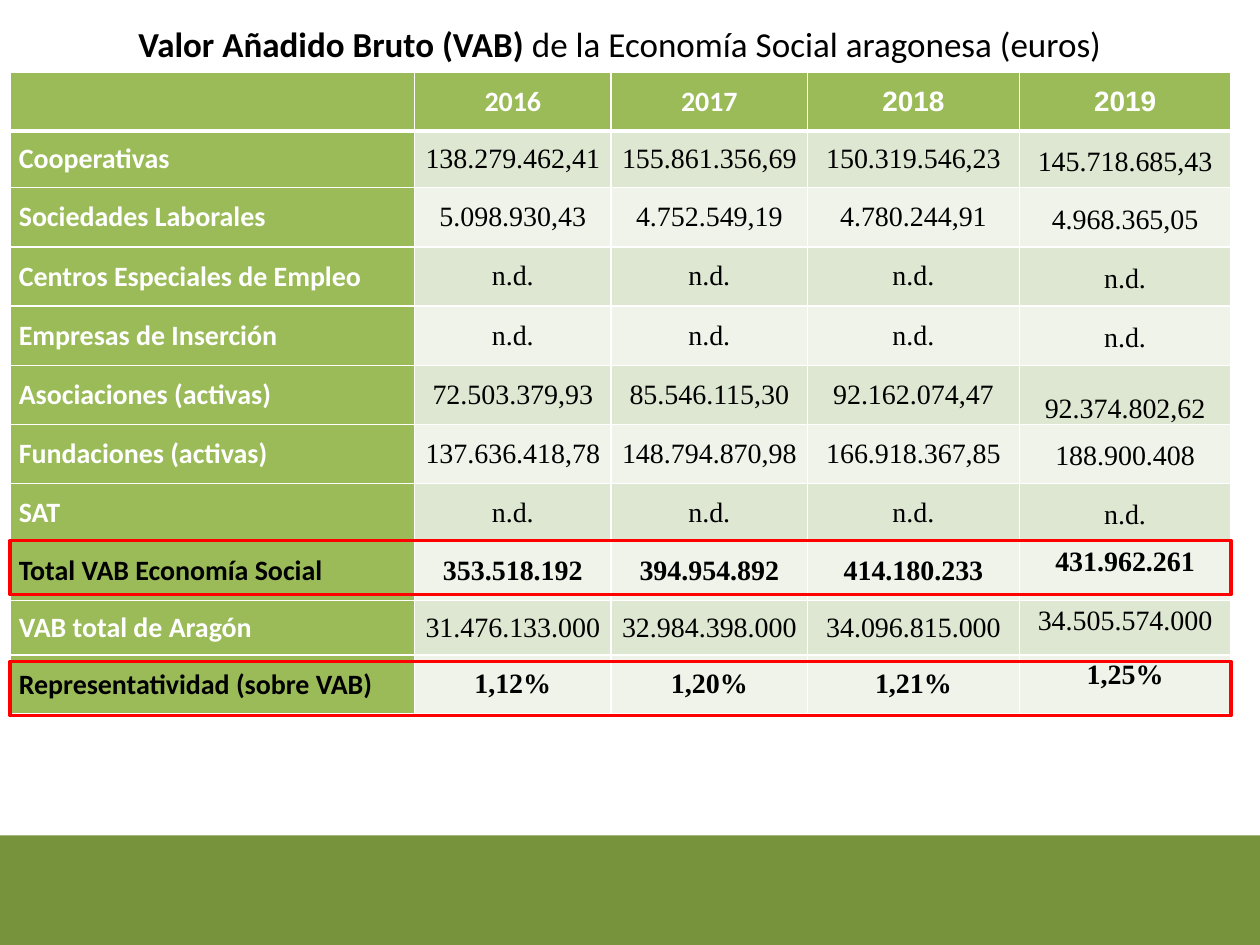
import dataclasses
import pptx
import pptx.dml.color
import pptx.enum.shapes
import pptx.enum.text
import pptx.oxml.ns
import pptx.util
from lxml import etree

Pt = pptx.util.Pt
Align = pptx.enum.text.PP_ALIGN
Anchor = pptx.enum.text.MSO_ANCHOR
Rect = pptx.enum.shapes.MSO_SHAPE.RECTANGLE

HUES = {"band": "77933C", "head": "9BBB59", "odd": "DEE7D1", "even": "EFF3EA",
        "white": "FFFFFF", "black": "000000", "red": "FF0000"}
YEARS = ("2016", "2017", "2018", "2019")
COLS = (231.12, 112.32, 112.32, 120.96, 120.96)
LEFT, TOP, WIDE = 5.76, 41.04, sum(COLS)


@dataclasses.dataclass
class Row:
    name: str
    vals: tuple[str, ...]
    high: float = 33.84
    total: bool = False
    last: Anchor = Anchor.MIDDLE  # anchor of the 2019 cell


@dataclasses.dataclass
class Style:
    font: str
    hue: str
    bold: bool
    size: float = 16


ND = ("n.d.",) * 4
ROWS = (
    Row("Cooperativas", ("138.279.462,41", "155.861.356,69", "150.319.546,23", "145.718.685,43"), 32.4),
    Row("Sociedades Laborales", ("5.098.930,43", "4.752.549,19", "4.780.244,91", "4.968.365,05")),
    Row("Centros Especiales de Empleo", ND),
    Row("Empresas de Inserción", ND),
    Row("Asociaciones (activas)", ("72.503.379,93", "85.546.115,30", "92.162.074,47", "92.374.802,62"),
        last=Anchor.BOTTOM),
    Row("Fundaciones (activas)", ("137.636.418,78", "148.794.870,98", "166.918.367,85", "188.900.408")),
    Row("SAT", ND, 33.12),
    Row("Total VAB Economía Social", ("353.518.192", "394.954.892", "414.180.233", "431.962.261"),
        total=True, last=Anchor.TOP),
    Row("VAB total de Aragón", ("31.476.133.000", "32.984.398.000", "34.096.815.000", "34.505.574.000"),
        30.96, last=Anchor.TOP),
    Row("Representatividad (sobre VAB)", ("1,12%", "1,20%", "1,21%", "1,25%"),
        total=True, last=Anchor.TOP),
)


def color(key: str) -> pptx.dml.color.RGBColor:
    return pptx.dml.color.RGBColor.from_string(HUES[key])


def format_run(run, style: Style) -> None:
    run.font.name = style.font
    run.font.size = Pt(style.size)
    run.font.bold = style.bold
    run.font.color.rgb = color(style.hue)


def set_edges(cell, above: float, below: float) -> None:
    props = cell._tc.get_or_add_tcPr()
    tag = pptx.oxml.ns.qn
    for side, width in (("L", 1), ("R", 1), ("T", above), ("B", below)):
        line = etree.SubElement(props, tag("a:ln" + side), w=str(Pt(width)))
        fill = etree.SubElement(line, tag("a:solidFill"))
        etree.SubElement(fill, tag("a:srgbClr"), val=HUES["white"])


def fill_cell(cell, text: str, style: Style, fill: str, align: Align, anchor: Anchor) -> None:
    cell.fill.solid()
    cell.fill.fore_color.rgb = color(fill)
    cell.margin_left = cell.margin_right = Pt(5.04)
    cell.margin_top = cell.margin_bottom = 0
    cell.vertical_anchor = anchor
    if text:
        cell.text_frame.text = text
        para = cell.text_frame.paragraphs[0]
        para.alignment = align
        format_run(para.runs[0], style)


def add_title(slide) -> None:
    title = slide.shapes.title
    title.left, title.top, title.width, title.height = Pt(30.96), Pt(9.36), Pt(646.56), Pt(39.6)
    frame = title.text_frame
    frame.auto_size = pptx.enum.text.MSO_AUTO_SIZE.NONE
    frame.vertical_anchor = Anchor.TOP
    para = frame.paragraphs[0]
    para.alignment = Align.CENTER
    for text, bold in (("Valor Añadido Bruto (VAB) ", True),
                       ("de la Economía Social aragonesa (euros)", False)):
        run = para.add_run()
        run.text = text
        format_run(run, Style("Calibri", "black", bold, 20))


def add_grid(slide) -> None:
    highs = [33.84] + [row.high for row in ROWS]
    grid = slide.shapes.add_table(len(highs), len(COLS), Pt(LEFT), Pt(TOP),
                                  Pt(WIDE), Pt(sum(highs))).table
    for col, width in zip(grid.columns, COLS):
        col.width = Pt(width)
    for line, high in zip(grid.rows, highs):
        line.height = Pt(high)
    for r in range(len(highs)):
        for c in range(len(COLS)):
            set_edges(grid.cell(r, c), 3 if r == 1 else 1, 3 if r == 0 else 1)

    # Header row
    for c, year in enumerate(("",) + YEARS):
        font = "Arial" if c > 2 else "Calibri"
        fill_cell(grid.cell(0, c), year, Style(font, "white", True), "head",
                  Align.CENTER, Anchor.MIDDLE)

    # Body rows
    for r, row in enumerate(ROWS, 1):
        label = Style("Calibri", "black" if row.total else "white", True)
        fill_cell(grid.cell(r, 0), row.name, label, "head", Align.LEFT, Anchor.MIDDLE)
        style = Style("Times New Roman", "black", row.total)
        for c, val in enumerate(row.vals, 1):
            final = c == len(YEARS)
            cell = grid.cell(r, c)
            fill_cell(cell, val, style, "odd" if r % 2 else "even", Align.CENTER,
                      row.last if final else Anchor.MIDDLE)
            if final:
                para = cell.text_frame.paragraphs[0]
                para.line_spacing = 1.15
                para.space_before = para.space_after = Pt(6)


def add_band(slide) -> None:
    band = slide.shapes.add_shape(Rect, 0, Pt(477.36), Pt(720), Pt(62.64))
    band.shadow.inherit = False
    band.fill.solid()
    band.fill.fore_color.rgb = color("band")
    band.line.fill.background()


def add_frame(slide, top: float) -> None:
    box = slide.shapes.add_shape(Rect, Pt(LEFT), Pt(top), Pt(WIDE), Pt(30.96))
    box.shadow.inherit = False
    box.fill.background()
    box.line.color.rgb = color("red")
    box.line.width = Pt(2)


def main() -> None:
    deck = pptx.Presentation()
    deck.slide_width, deck.slide_height = Pt(720), Pt(540)
    slide = deck.slides.add_slide(deck.slide_layouts[5])
    add_band(slide)
    add_title(slide)
    add_grid(slide)
    # Red frames around the totals
    for top in (378, 308.88):
        add_frame(slide, top)
    deck.save("out.pptx")


if __name__ == "__main__":
    main()
